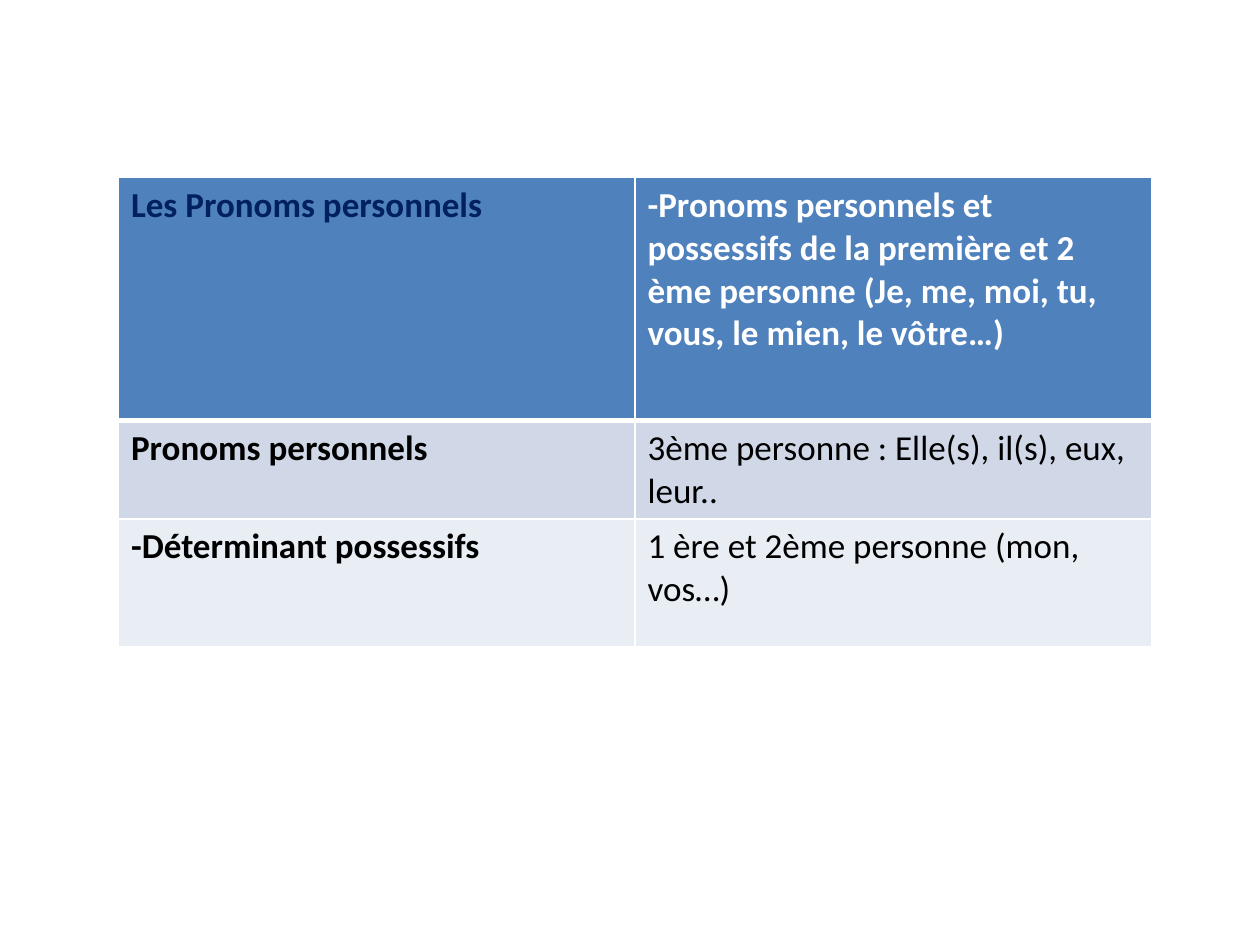
from dataclasses import dataclass

from lxml import etree
from pptx import Presentation
from pptx import util as u
from pptx.dml.color import RGBColor
from pptx.oxml import ns


@dataclass(frozen=True)
class Theme:
    font: str = "Calibri"
    size: int = 20
    navy: str = "002060"
    white: str = "FFFFFF"
    black: str = "000000"
    row_fills: tuple = ("4F81BD", "D0D8E8", "E9EDF4")
    thin: float = 1
    thick: float = 3


THEME = Theme()
BLANK_LAYOUT = 6
LEFT, TOP = 0.94, 1.41
COLUMN_WIDTH = 4.1
ROW_HEIGHTS = (1.93, 0.77, 1.01)
ROWS = (
    (
        "Les Pronoms personnels",
        "-Pronoms personnels et possessifs de la première et 2 ème personne "
        "(Je, me, moi, tu, vous, le mien, le vôtre…)",
    ),
    ("Pronoms personnels", "3ème personne : Elle(s), il(s), eux, leur.."),
    ("-Déterminant possessifs", "1 ère et 2ème personne (mon, vos…)"),
)


def write_cell(cell, words, color, bold):
    run = cell.text_frame.paragraphs[0].add_run()
    run.text = words
    run.font.name = THEME.font
    run.font.size = u.Pt(THEME.size)
    run.font.bold = bold
    run.font.color.rgb = RGBColor.from_string(color)


def fill_cell(cell, color):
    cell.fill.solid()
    cell.fill.fore_color.rgb = RGBColor.from_string(color)


def border_cell(cell, top, bottom):
    properties = cell._tc.get_or_add_tcPr()
    sides = {"lnL": THEME.thin, "lnR": THEME.thin, "lnT": top, "lnB": bottom}
    for position, (side, width) in enumerate(sides.items()):
        line = etree.Element(ns.qn(f"a:{side}"), w=str(u.Pt(width)))
        fill = etree.SubElement(line, ns.qn("a:solidFill"))
        etree.SubElement(fill, ns.qn("a:srgbClr"), val=THEME.white)
        properties.insert(position, line)


def text_color(row, column):
    if row > 0:
        return THEME.black
    return THEME.navy if column == 0 else THEME.white


def add_pronoun_table(slide):
    column_count = len(ROWS[0])
    table = slide.shapes.add_table(
        len(ROWS),
        column_count,
        u.Inches(LEFT),
        u.Inches(TOP),
        u.Inches(COLUMN_WIDTH * column_count),
        u.Inches(sum(ROW_HEIGHTS)),
    ).table
    for column in table.columns:
        column.width = u.Inches(COLUMN_WIDTH)
    for row, words in enumerate(ROWS):
        table.rows[row].height = u.Inches(ROW_HEIGHTS[row])
        for column, entry in enumerate(words):
            cell = table.cell(row, column)
            write_cell(cell, entry, text_color(row, column), row == 0 or column == 0)
            fill_cell(cell, THEME.row_fills[row])
            border_cell(
                cell,
                top=THEME.thick if row == 1 else THEME.thin,
                bottom=THEME.thick if row == 0 else THEME.thin,
            )


def main():
    presentation = Presentation()
    presentation.slide_width = u.Inches(10)
    presentation.slide_height = u.Inches(7.5)
    slide = presentation.slides.add_slide(presentation.slide_layouts[BLANK_LAYOUT])
    add_pronoun_table(slide)
    presentation.save("out.pptx")


if __name__ == "__main__":
    main()
